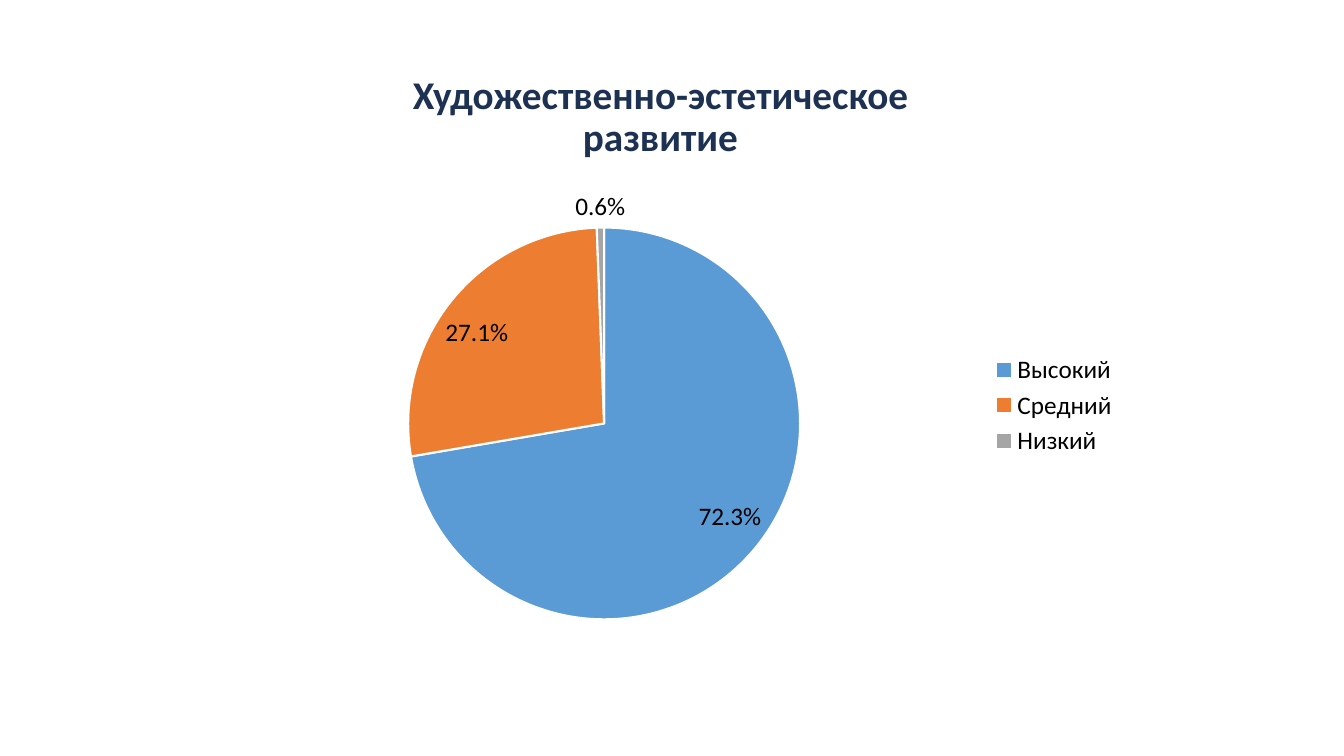
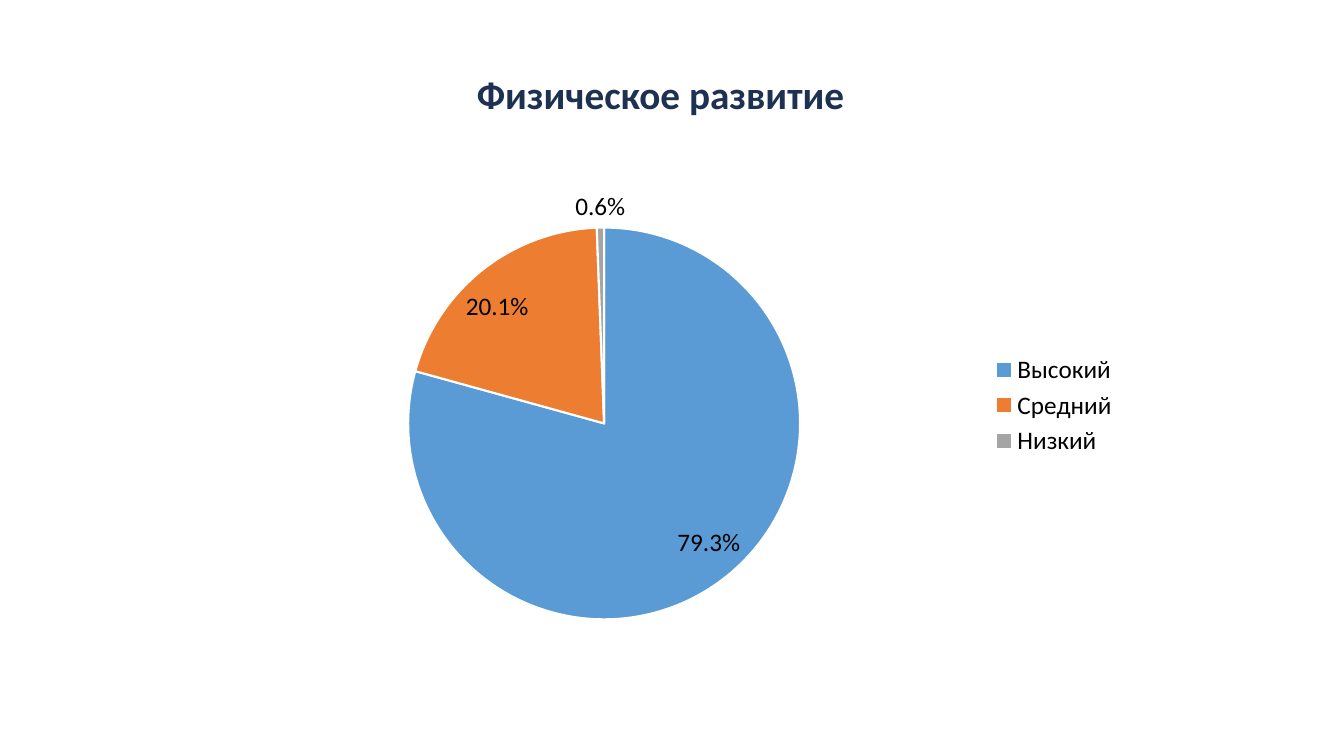
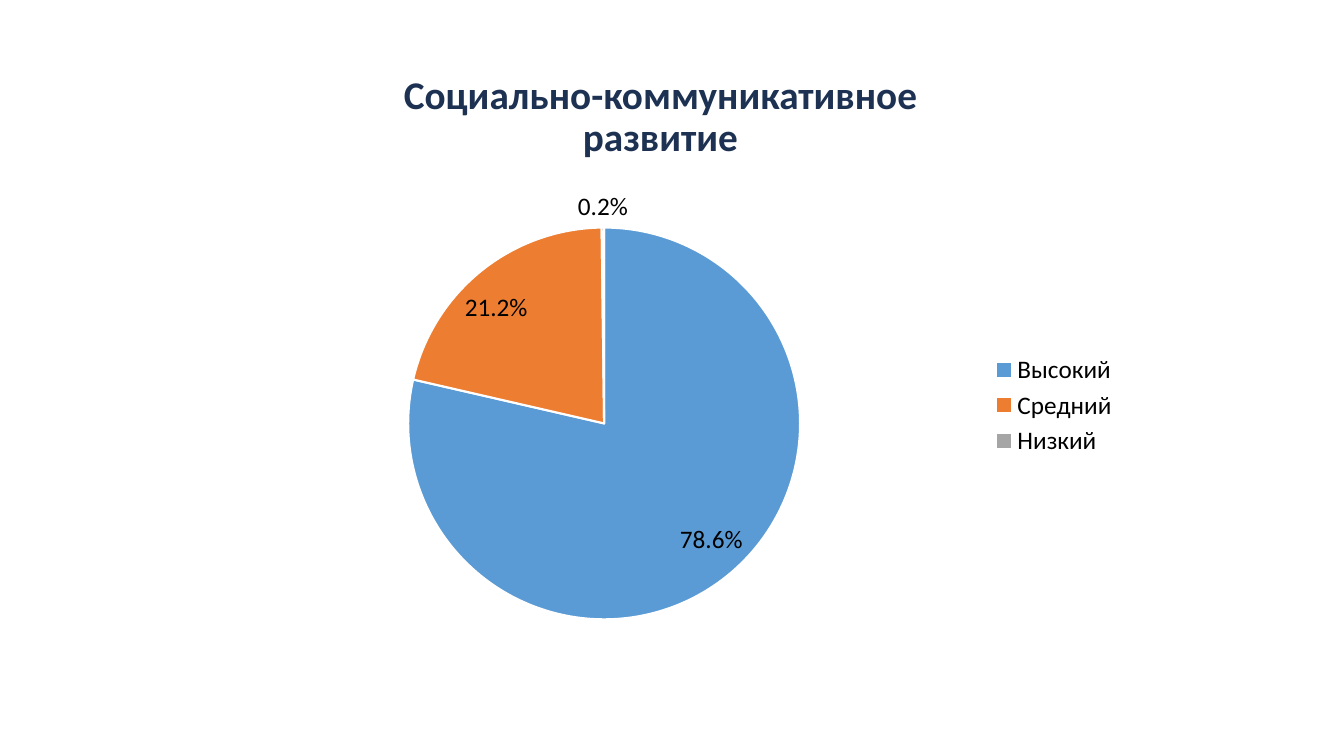
from dataclasses import dataclass
from lxml.etree import SubElement
from pptx import Presentation
from pptx.chart.data import CategoryChartData
from pptx.dml.color import RGBColor
from pptx.enum.chart import XL_CHART_TYPE, XL_LABEL_POSITION, XL_LEGEND_POSITION
from pptx.enum.text import MSO_ANCHOR, MSO_AUTO_SIZE, PP_ALIGN
from pptx.oxml.ns import qn
from pptx.util import Inches, Pt


# Shared look
@dataclass(frozen=True)
class Theme:
    face: str = "Calibri"
    navy: str = "1D3152"
    black: str = "000000"
    white: str = "FFFFFF"
    slices: tuple = ("5B9BD5", "ED7D31", "A5A5A5")
    head: int = 28
    body: int = 18
    edge: float = 1.5


LOOK = Theme()
LEVELS = ("Высокий", "Средний", "Низкий")
PLOT = {"x": 0.21, "y": 0.11, "w": 0.43, "h": 0.86}

# Title, number of title lines, share of each level
SLIDES = (
    ("Художественно-эстетическое развитие", 2, (0.723, 0.271, 0.006)),
    ("Физическое развитие", 1, (0.793, 0.201, 0.006)),
    ("Социально-коммуникативное развитие", 2, (0.786, 0.212, 0.002)),
)


def apply(item, form):
    for name, value in form.items():
        setattr(item, name, value)


def style(font, size, color, bold=False):
    apply(font, {"name": LOOK.face, "size": Pt(size), "bold": bold})
    font.color.rgb = RGBColor.from_string(color)


# Title placeholder
def add_title(slide, text, lines):
    title = slide.shapes.title
    apply(title, {"left": Inches(3.44), "top": Inches(0.7),
                  "width": Inches(6.22), "height": Inches(0.11 + 0.42 * lines)})
    frame = title.text_frame
    frame.text = text
    sides = ("left", "right", "top", "bottom")
    apply(frame, {f"margin_{side}": Inches(0.05) for side in sides})
    apply(frame, {"word_wrap": True, "vertical_anchor": MSO_ANCHOR.TOP,
                  "auto_size": MSO_AUTO_SIZE.SHAPE_TO_FIT_TEXT})
    para = frame.paragraphs[0]
    apply(para, {"alignment": PP_ALIGN.CENTER, "line_spacing": 0.9,
                 "space_before": Pt(0)})
    style(para.runs[0].font, LOOK.head, LOOK.navy, True)


# Fixed place of the pie inside its chart
def place_plot(chart):
    area = chart.plots[0]._element.getparent()
    for old in area.findall(qn("c:layout")):
        area.remove(old)
    layout = SubElement(area, qn("c:layout"))
    area.insert(0, layout)
    manual = SubElement(layout, qn("c:manualLayout"))
    modes = {"layoutTarget": "inner", "xMode": "edge", "yMode": "edge"}
    for name, value in (modes | PLOT).items():
        SubElement(manual, qn(f"c:{name}")).set("val", str(value))


# Pie chart with legend and value labels
def add_pie(slide, shares):
    data = CategoryChartData(number_format="0.0%")
    data.categories = LEVELS
    data.add_series("Series 1", shares)
    chart = slide.shapes.add_chart(
        XL_CHART_TYPE.PIE, Inches(2.15), Inches(1.75),
        Inches(9.04), Inches(4.54), data).chart
    apply(chart, {"has_title": False, "has_legend": True})
    style(chart.font, LOOK.body, LOOK.black)
    apply(chart.legend, {"position": XL_LEGEND_POSITION.RIGHT,
                         "include_in_layout": False})
    style(chart.legend.font, LOOK.body, LOOK.black)

    plot = chart.plots[0]
    apply(plot, {"vary_by_categories": True, "has_data_labels": True})
    labels = plot.data_labels
    apply(labels, {"show_value": True, "show_percentage": False,
                   "number_format": "0.0%", "number_format_is_linked": False,
                   "position": XL_LABEL_POSITION.BEST_FIT})
    style(labels.font, LOOK.body, LOOK.black)

    for index, color in enumerate(LOOK.slices):
        slot = plot.series[0].points[index].format
        slot.fill.solid()
        slot.fill.fore_color.rgb = RGBColor.from_string(color)
        slot.line.color.rgb = RGBColor.from_string(LOOK.white)
        slot.line.width = Pt(LOOK.edge)
    place_plot(chart)


def main():
    deck = Presentation()
    apply(deck, {"slide_width": Inches(13.33), "slide_height": Inches(7.5)})
    for text, lines, shares in SLIDES:
        slide = deck.slides.add_slide(deck.slide_layouts[5])
        add_title(slide, text, lines)
        add_pie(slide, shares)
    deck.save("out.pptx")


if __name__ == "__main__":
    main()
